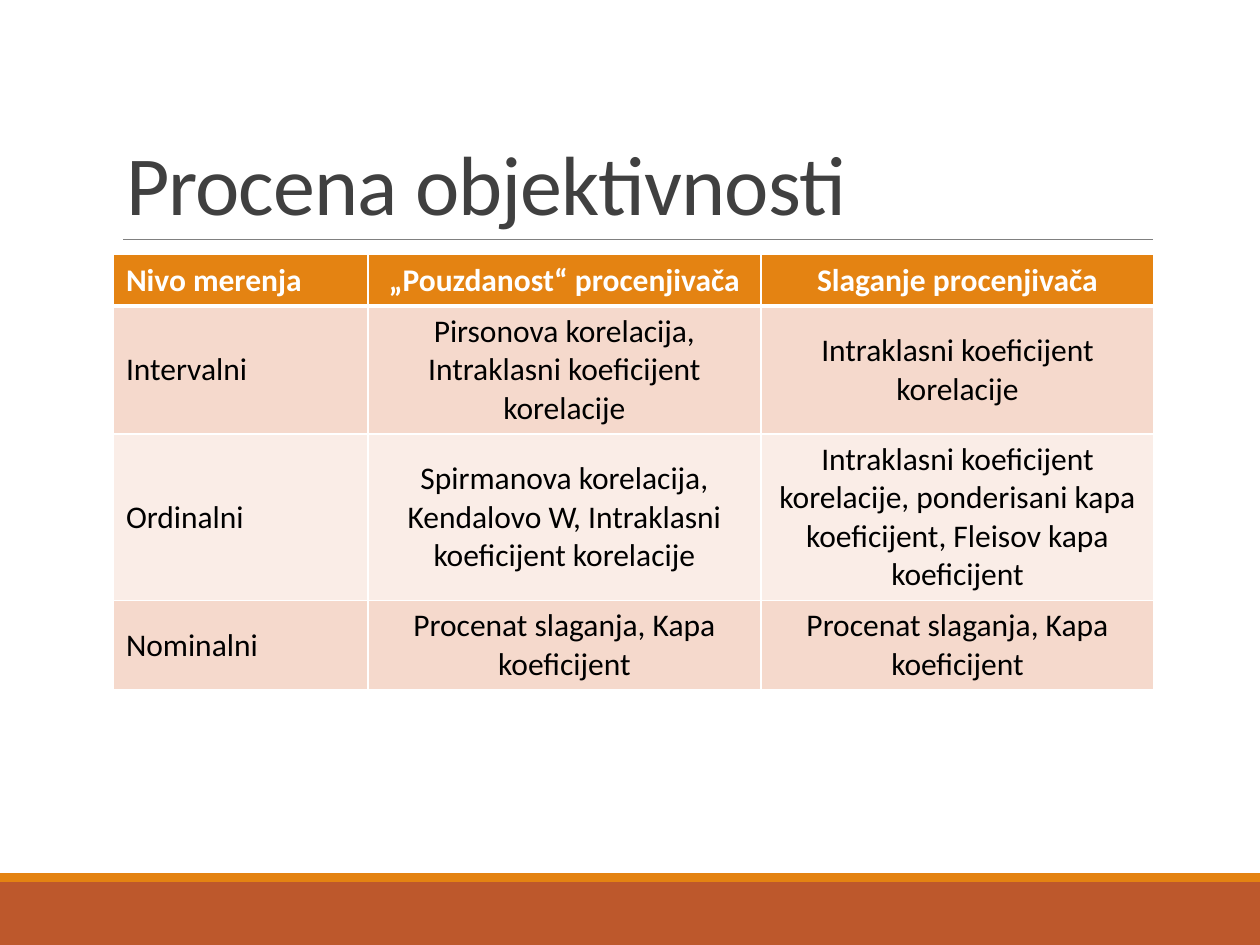
from dataclasses import dataclass

from lxml.etree import SubElement
from pptx import Presentation
from pptx.dml.color import RGBColor
from pptx.enum.shapes import MSO_CONNECTOR, MSO_SHAPE
from pptx.enum.text import MSO_ANCHOR, PP_ALIGN
from pptx.oxml.ns import qn
from pptx.util import Inches, Pt

WHITE = RGBColor(0xFF, 0xFF, 0xFF)
BLACK = RGBColor(0x00, 0x00, 0x00)
DARK = RGBColor(0x40, 0x40, 0x40)
GRAY = RGBColor(0x80, 0x80, 0x80)
RUST = RGBColor(0xBD, 0x58, 0x2C)
ORANGE = RGBColor(0xE4, 0x83, 0x12)
PEACH = RGBColor(0xF5, 0xD9, 0xCC)
CREAM = RGBColor(0xFA, 0xED, 0xE7)
FONT = "Calibri"
LEFT, WIDTH = 0.9, 8.25


@dataclass
class Band:
    top: float
    height: float
    color: RGBColor


@dataclass
class Row:
    cells: tuple
    fill: RGBColor
    color: RGBColor = BLACK
    bold: bool = False


BANDS = [Band(7, 0.5, RUST), Band(6.93, 0.07, ORANGE)]
COLS = [2.02, 3.12, 3.12]
ROWS = [
    Row(("Nivo merenja", "„Pouzdanost“ procenjivača", "Slaganje procenjivača"),
        ORANGE, WHITE, True),
    Row(("Intervalni",
         "Pirsonova korelacija,\nIntraklasni koeficijent korelacije",
         "Intraklasni koeficijent korelacije"), PEACH),
    Row(("Ordinalni",
         "Spirmanova korelacija, Kendalovo W, Intraklasni koeficijent korelacije",
         "Intraklasni koeficijent korelacije, ponderisani kapa koeficijent, "
         "Fleisov kapa koeficijent"), CREAM),
    Row(("Nominalni",) + ("Procenat slaganja, Kapa koeficijent",) * 2, PEACH),
]


def add_band(slide, band: Band) -> None:
    shape = slide.shapes.add_shape(
        MSO_SHAPE.RECTANGLE, 0, Inches(band.top), Inches(10), Inches(band.height))
    shape.shadow.inherit = False
    shape.fill.solid()
    shape.fill.fore_color.rgb = band.color
    shape.line.fill.background()


def add_rule(slide) -> None:
    rule = slide.shapes.add_connector(
        MSO_CONNECTOR.STRAIGHT, Inches(0.98), Inches(1.9), Inches(9.15), Inches(1.9))
    rule.line.color.rgb = GRAY
    rule.line.width = Pt(0.5)
    SubElement(rule._element.spPr, qn("a:effectLst"))


def set_title(slide, text: str) -> None:
    title = slide.shapes.title
    title.left, title.top = Inches(LEFT), Inches(0.31)
    title.width, title.height = Inches(WIDTH), Inches(1.59)
    frame = title.text_frame
    frame.text = text
    frame.word_wrap = True
    frame.vertical_anchor = MSO_ANCHOR.BOTTOM
    para = frame.paragraphs[0]
    para.alignment = PP_ALIGN.LEFT
    para.line_spacing = 0.85
    run = para.runs[0]
    run.font.name = FONT
    run.font.size = Pt(48)
    run.font.color.rgb = DARK
    run._r.get_or_add_rPr().set("spc", "-50")


def add_edge(cell, side: str, width: float) -> None:
    props = cell._tc.get_or_add_tcPr()
    line = SubElement(props, qn(f"a:ln{side}"), w=str(Pt(width)))
    fill = SubElement(line, qn("a:solidFill"))
    SubElement(fill, qn("a:srgbClr"), val=str(WHITE))


def fill_cell(cell, text: str, row: Row, align: PP_ALIGN) -> None:
    cell.fill.solid()
    cell.fill.fore_color.rgb = row.fill
    cell.vertical_anchor = MSO_ANCHOR.MIDDLE
    cell.text_frame.text = text
    for para in cell.text_frame.paragraphs:
        para.alignment = align
        for run in para.runs:
            run.font.name = FONT
            run.font.size = Pt(18)
            run.font.bold = row.bold
            run.font.color.rgb = row.color


def add_grid(slide) -> None:
    table = slide.shapes.add_table(
        len(ROWS), len(COLS), Inches(LEFT), Inches(2.02),
        Inches(WIDTH), Inches(0.41 * len(ROWS))).table
    for col, width in zip(table.columns, COLS):
        col.width = Inches(width)
    for i, row in enumerate(ROWS):
        for j, text in enumerate(row.cells):
            cell = table.cell(i, j)
            for side in "LRTB":
                thick = (i, side) in ((0, "B"), (1, "T"))
                add_edge(cell, side, 3 if thick else 1)
            fill_cell(cell, text, row, PP_ALIGN.CENTER if j else PP_ALIGN.LEFT)


def main() -> None:
    deck = Presentation()
    deck.slide_width, deck.slide_height = Inches(10), Inches(7.5)
    slide = deck.slides.add_slide(deck.slide_layouts[5])
    for band in BANDS:
        add_band(slide, band)
    add_rule(slide)
    set_title(slide, "Procena objektivnosti")
    add_grid(slide)
    deck.save("out.pptx")


if __name__ == "__main__":
    main()
